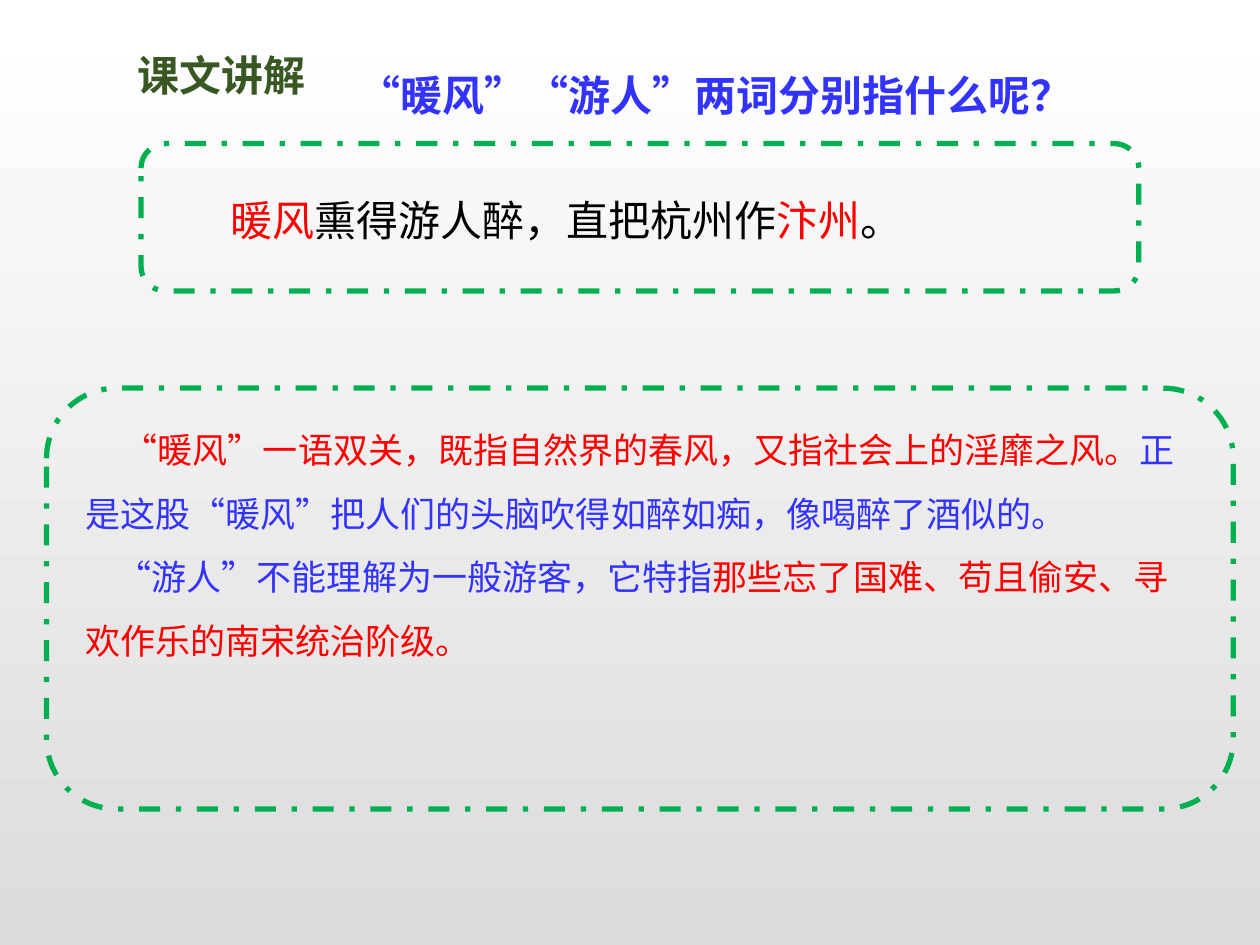
from dataclasses import dataclass

from pptx import Presentation
from pptx.dml.color import RGBColor
from pptx.enum import dml, lang, shapes, text
from pptx.oxml import ns, xmlchemy as xml
from pptx.util import Pt


@dataclass(frozen=True)
class Theme:
    font: str = "Noto Sans CJK SC"
    head: int = 24
    body: int = 20
    olive: str = "385723"
    blue: str = "3333FF"
    red: str = "FF0000"
    black: str = "000000"
    green: str = "00B050"
    top: str = "FFFFFF"
    base: str = "DCDCDC"


T = Theme()


def rgb(code):
    return RGBColor.from_string(code)


def add_text(slide, box, inset, wrap=True):
    """Add a text box; inset lists left, top, right and bottom."""
    frame = slide.shapes.add_textbox(*map(Pt, box)).text_frame
    frame.word_wrap = wrap
    (frame.margin_left, frame.margin_top,
     frame.margin_right, frame.margin_bottom) = map(Pt, inset)
    return frame


def add_runs(para, runs, size, bold=False):
    """Add (words, colour) runs with one font for both scripts."""
    for words, color in runs:
        run = para.add_run()
        run.text = words
        font = run.font
        font.size, font.bold, font.name = Pt(size), bold, T.font
        font.language_id = lang.MSO_LANGUAGE_ID.SIMPLIFIED_CHINESE
        font.color.rgb = rgb(color)
        east = xml.OxmlElement("a:ea")
        east.set("typeface", T.font)
        run._r.rPr.find(ns.qn("a:latin")).addnext(east)


def add_frame(slide, box):
    """Add a rounded outline in dashes and dots."""
    shape = slide.shapes.add_shape(
        shapes.MSO_SHAPE.ROUNDED_RECTANGLE, *map(Pt, box))
    shape.shadow.inherit = False
    shape.fill.background()
    shape.line.color.rgb = rgb(T.green)
    shape.line.width = Pt(3)
    shape.line.dash_style = dml.MSO_LINE.DASH_DOT


def add_back(slide):
    fill = slide.background.fill
    fill.gradient()
    fill.gradient_angle = 270
    for stop, color, place in zip(fill.gradient_stops, (T.top, T.base), (0, 1)):
        stop.color.rgb = rgb(color)
        stop.position = place


def add_label(slide, box):
    para = add_text(slide, box, (5, 3, 5, 3), wrap=False).paragraphs[0]
    para.alignment = text.PP_ALIGN.CENTER
    para.line_spacing = Pt(31.5)
    add_runs(para, [("课文讲解", T.olive)], T.head, bold=True)


def add_query(slide, box):
    frame = add_text(slide, box, (7.2, 7.2, 7.2, 5))
    frame.vertical_anchor = text.MSO_ANCHOR.BOTTOM
    add_runs(frame.paragraphs[0],
             [("“暖风”“游人”两词分别指什么呢？", T.blue)], T.head, bold=True)


def add_verse(slide, box):
    left, top, _, _ = box
    add_frame(slide, box)
    frame = add_text(slide, (left + 44, top + 8.6, 482, 51), (7.2, 5.6, 7.2, 1.6))
    para = frame.paragraphs[0]
    para.line_spacing = Pt(43.5)
    add_runs(para, [("暖风", T.red), ("熏得游人醉，直把杭州作", T.black),
                    ("汴州", T.red), ("。", T.black)], T.head)


def add_notes(slide, box):
    left, top, _, _ = box
    frame = add_text(slide, (left + 15, top, 648, 160), (7.2, 11, 7.2, 3.6))
    notes = [
        (21.5, [("“暖风”一语双关，既指自然界的春风，又指社会上的淫靡之风。", T.red),
                ("正是这股“暖风”把人们的头脑吹得如醉如痴，像喝醉了酒似的。", T.blue)]),
        (18, [("“游人”不能理解为一般游客，它特指", T.blue),
              ("那些忘了国难、苟且偷安、寻欢作乐的南宋统治阶级。", T.red)]),
    ]
    for i, (indent, runs) in enumerate(notes):
        para = frame.add_paragraph() if i else frame.paragraphs[0]
        para.line_spacing = Pt(36.25)
        para._p.get_or_add_pPr().set("indent", str(Pt(indent)))
        add_runs(para, runs, T.body)
    add_frame(slide, box)


def main():
    deck = Presentation()
    deck.slide_width, deck.slide_height = Pt(720), Pt(540)
    slide = deck.slides.add_slide(deck.slide_layouts[6])
    add_back(slide)
    add_label(slide, (72.7, 22.3, 108, 34.6))
    add_verse(slide, (80.6, 82.1, 570.2, 84.2))
    add_query(slide, (198, 14.4, 604.8, 59))
    add_notes(slide, (26.6, 221.8, 678.2, 240.5))
    deck.save("out.pptx")


if __name__ == "__main__":
    main()
